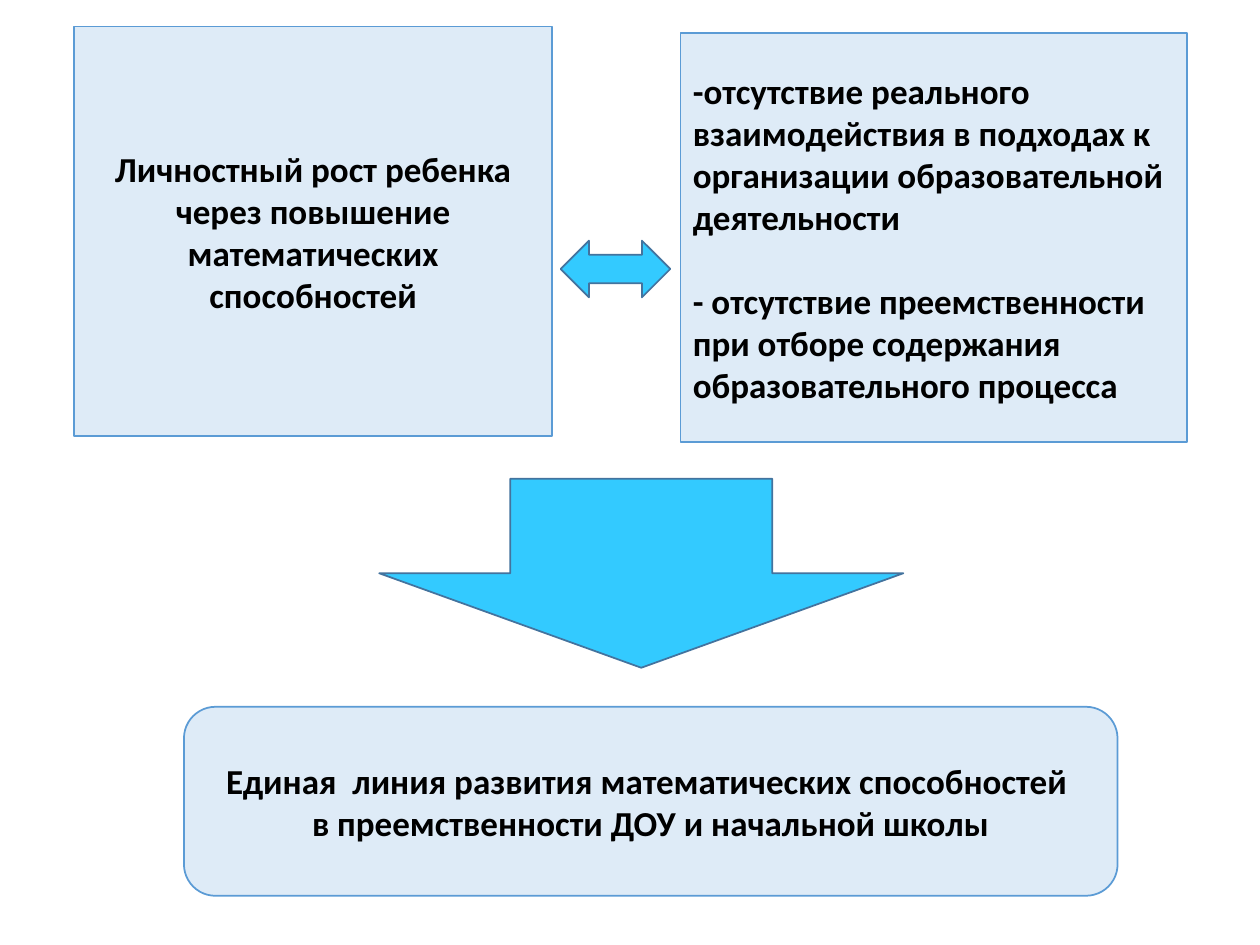
"""Build a slide on the child's growth and one line of maths teaching."""
from pptx import Presentation, util as u
from pptx.dml.color import RGBColor
from pptx.enum import shapes, text

HUE = {"pale": "DEEBF7", "edge": "5B9BD5", "sky": "33CAFF", "rim": "43739E", "ink": "000000"}
KIND = shapes.MSO_SHAPE
SIDE = text.PP_ALIGN

deck = Presentation()
deck.slide_width, deck.slide_height = u.Inches(10), u.Inches(7.5)
slide = deck.slides.add_slide(deck.slide_layouts[6])
col, row = deck.slide_width / 100, deck.slide_height / 75


def draw(kind, left, top, wide, high, fill, line):
    shape = slide.shapes.add_shape(
        kind, int(left * col), int(top * row), int(wide * col), int(high * row))
    shape.shadow.inherit = False
    shape.fill.solid()
    shape.fill.fore_color.rgb = RGBColor.from_string(HUE[fill])
    shape.line.color.rgb = RGBColor.from_string(HUE[line])
    shape.line.width = u.Pt(1)
    return shape


def write(shape, *lines, align=SIDE.CENTER, size=20, gap=0, color="ink"):
    frame = shape.text_frame
    frame.word_wrap = True
    frame.vertical_anchor = text.MSO_ANCHOR.MIDDLE
    for i, line in enumerate(lines):
        para = frame.add_paragraph() if i else frame.paragraphs[0]
        para.alignment = align
        para.space_before = u.Pt(gap if i else 0)
        run = para.add_run()
        run.text = line
        run.font.name, run.font.size, run.font.bold = "Calibri", u.Pt(size), True
        run.font.color.rgb = RGBColor.from_string(HUE[color])


goal = draw(KIND.RECTANGLE, 5.9, 2.1, 37.9, 32.5, "pale", "edge")
write(goal, "Личностный рост ребенка через повышение математических способностей")

gaps = draw(KIND.RECTANGLE, 54, 2.6, 40.2, 32.5, "pale", "edge")
write(gaps,
      "-отсутствие реального взаимодействия в подходах к организации образовательной деятельности",
      "- отсутствие преемственности при отборе содержания образовательного процесса",
      align=SIDE.LEFT, gap=24)

path_box = draw(KIND.ROUNDED_RECTANGLE, 14.6, 56.1, 74.1, 15, "pale", "edge")
write(path_box, "Единая  линия развития математических способностей ",
      "в преемственности ДОУ и начальной школы")

draw(KIND.DOWN_ARROW, 30.1, 38, 41.6, 15, "sky", "rim")
draw(KIND.LEFT_RIGHT_ARROW, 44.5, 19.1, 8.7, 4.5, "sky", "rim")

deck.save("out.pptx")
